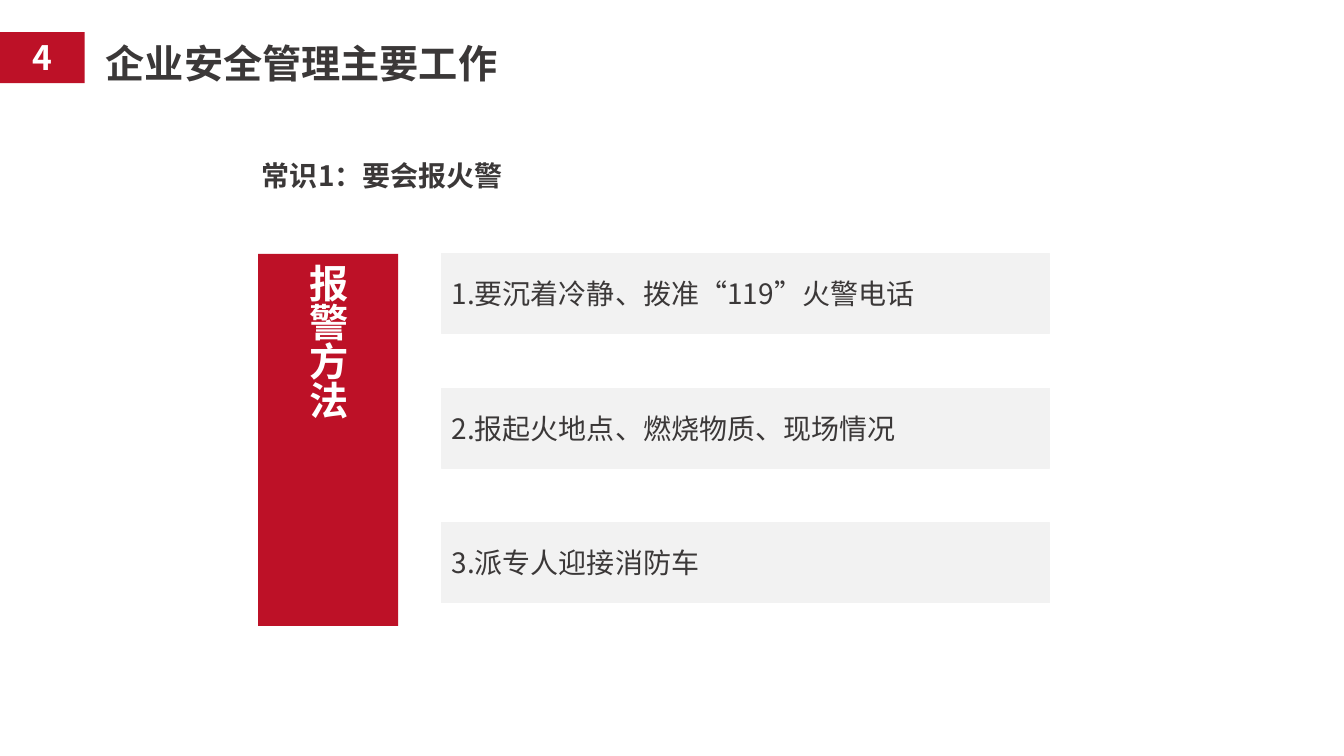
from lxml import etree
from pptx import Presentation
from pptx.dml.color import RGBColor
from pptx.enum import shapes, text
from pptx.oxml import ns
from pptx.util import Pt

# Content
TITLE = "企业安全管理主要工作"
SECTION = "4"
TOPIC = "常识1：要会报火警"
METHOD = "报警方法"
STEPS = [
    "1.要沉着冷静、拨准“119”火警电话",
    "2.报起火地点、燃烧物质、现场情况",
    "3.派专人迎接消防车",
]

# Style
FONT = "Noto Sans CJK SC"
RED = RGBColor(0xBD, 0x11, 0x27)
GREY = RGBColor(0xF2, 0xF2, 0xF2)
DARK = RGBColor(0x3B, 0x38, 0x38)
WHITE = RGBColor(0xFF, 0xFF, 0xFF)

# Layout, in points
STEP_LEFT, STEP_TOP, STEP_WIDTH, STEP_HEIGHT = 315.4, 181.2, 434.2, 57
STEP_PITCH = 96.1


def write(holder, words, size, color, bold=True,
          align=text.PP_ALIGN.LEFT, anchor=text.MSO_ANCHOR.TOP):
    frame = holder.text_frame
    frame.text = words
    frame.word_wrap = True
    frame.auto_size = text.MSO_AUTO_SIZE.NONE
    frame.vertical_anchor = anchor
    paragraph = frame.paragraphs[0]
    paragraph.alignment = align
    font = paragraph.runs[0].font
    font.name, font.size, font.bold = FONT, Pt(size), bold
    font.color.rgb = color
    # East Asian characters take their own typeface element
    east_asian = etree.SubElement(font._element, ns.qn("a:ea"))
    east_asian.set("typeface", FONT)


def place(holder, left, top, width, height):
    holder.left, holder.top = Pt(left), Pt(top)
    holder.width, holder.height = Pt(width), Pt(height)


def add_block(left, top, width, height, color):
    block = slide.shapes.add_shape(
        shapes.MSO_SHAPE.RECTANGLE, Pt(left), Pt(top), Pt(width), Pt(height))
    block.shadow.inherit = False
    block.fill.solid()
    block.fill.fore_color.rgb = color
    block.line.fill.background()
    return block


deck = Presentation()
deck.slide_width, deck.slide_height = Pt(960), Pt(540)
slide = deck.slides.add_slide(deck.slide_layouts[5])

# Heading with section number
title = slide.shapes.title
place(title, 68.4, 24.5, 339, 41)
write(title, TITLE, 28, DARK)
section = add_block(0, 23, 60.5, 36.4, RED)
write(section, SECTION, 24, WHITE, align=text.PP_ALIGN.CENTER)

# Topic line
topic = slide.shapes.add_textbox(Pt(109.4), Pt(109.4), Pt(327.6), Pt(31.7))
write(topic, TOPIC, 20, DARK, align=text.PP_ALIGN.CENTER)

# Red panel with vertical label
method = add_block(184.3, 181.4, 100.1, 265.7, RED)
write(method, METHOD, 28, WHITE, anchor=text.MSO_ANCHOR.MIDDLE)
method.text_frame._txBody.bodyPr.set("vert", "eaVert")

# Steps
for index, words in enumerate(STEPS):
    step = add_block(STEP_LEFT, STEP_TOP + index * STEP_PITCH,
                     STEP_WIDTH, STEP_HEIGHT, GREY)
    step.line.color.rgb = GREY
    step.line.width = Pt(0.75)
    write(step, words, 20, DARK, bold=False, anchor=text.MSO_ANCHOR.MIDDLE)

deck.save("out.pptx")
